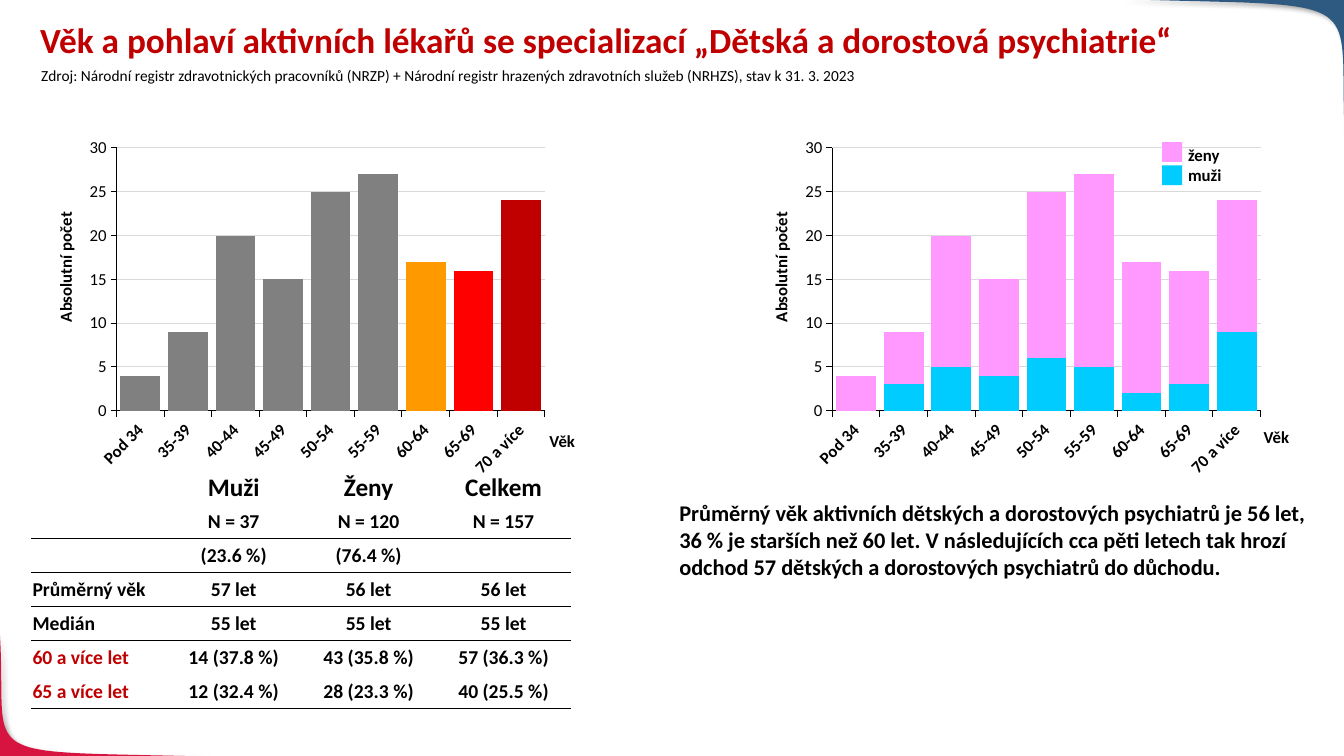
from dataclasses import dataclass

import lxml.etree
import pptx
import pptx.chart.data
import pptx.dml.color
import pptx.enum.chart
import pptx.enum.shapes
import pptx.enum.text
import pptx.oxml.ns
import pptx.util

Cm = pptx.util.Cm
Pt = pptx.util.Pt
qn = pptx.oxml.ns.qn
Align = pptx.enum.text.PP_ALIGN
Point = tuple[float, float]


@dataclass(frozen=True)
class Theme:
    font: str = "Calibri"
    ink: str = "000000"
    accent: str = "C00000"
    grid: str = "D9D9D9"
    women: str = "FF99FF"
    men: str = "00CCFF"
    total: str = "808080"
    sixty: str = "FF9900"
    sixty_five: str = "FF0000"
    corner_blue: str = "2E5980"
    corner_red: str = "D71440"
    title_size: float = 25.2
    heading_size: float = 18
    body_size: float = 16
    table_size: float = 14
    label_size: float = 12
    source_size: float = 11


@dataclass(frozen=True)
class Corner:
    color: str
    start: Point
    curve: tuple[Point, Point, Point]
    tip: Point


@dataclass(frozen=True)
class Series:
    name: str
    values: tuple[int, ...]
    color: str


@dataclass(frozen=True)
class AgeChart:
    left: float
    kind: pptx.enum.chart.XL_CHART_TYPE
    series: tuple[Series, ...]
    highlights: dict[int, str]
    age_label: tuple[float, float, float]
    count_label_left: float


THEME = Theme()
AGES = ("Pod 34", "35-39", "40-44", "45-49", "50-54", "55-59", "60-64", "65-69", "70 a více")
CORNERS = (
    Corner(THEME.corner_red, (5.41, 19.07), ((-0.86, 18.9), (0.2, 19.28), (0, 16)), (-0.02, 19.07)),
    Corner(THEME.corner_blue, (28.22, -0.02), ((34.8, 0.18), (33.68, -0.25), (33.9, 3.61)), (33.9, -0.02)),
)
CHARTS = (
    AgeChart(2.03, pptx.enum.chart.XL_CHART_TYPE.COLUMN_CLUSTERED,
             (Series("celkem", (4, 9, 20, 15, 25, 27, 17, 16, 24), THEME.total),),
             {6: THEME.sixty, 7: THEME.sixty_five, 8: THEME.accent}, (13.51, 10.74, 1.32), -0.02),
    AgeChart(20.07, pptx.enum.chart.XL_CHART_TYPE.COLUMN_STACKED,
             (Series("muži", (0, 3, 5, 4, 6, 5, 2, 3, 9), THEME.men),
              Series("ženy", (4, 6, 15, 11, 19, 22, 15, 13, 15), THEME.women)),
             {}, (31.34, 10.62, 1.65), 18.01),
)
SUMMARY = (
    ("", "Muži", "Ženy", "Celkem"),
    ("", "N = 37", "N = 120", "N = 157"),
    ("", "(23.6 %)", "(76.4 %)", ""),
    ("Průměrný věk", "57 let", "56 let", "56 let"),
    ("Medián", "55 let", "55 let", "55 let"),
    ("60 a více let", "14 (37.8 %)", "43 (35.8 %)", "57 (36.3 %)"),
    ("65 a více let", "12 (32.4 %)", "28 (23.3 %)", "40 (25.5 %)"),
)
RULED_ROWS = {1, 2, 3, 4, 6}
ACCENT_ROWS = {5, 6}


def rgb(color: str) -> pptx.dml.color.RGBColor:
    return pptx.dml.color.RGBColor.from_string(color)


def style_font(font, size: float, color: str = THEME.ink, bold: bool = False) -> None:
    font.name, font.size, font.bold = THEME.font, Pt(size), bold
    font.color.rgb = rgb(color)


def write(frame, text: str, *, size: float, color: str = THEME.ink, bold: bool = True,
          align=Align.LEFT, spacing: float | None = None) -> None:
    for index, line in enumerate(text.split("\n")):
        para = frame.add_paragraph() if index else frame.paragraphs[0]
        para.alignment, para.line_spacing = align, spacing
        span = para.add_run()
        span.text = line
        style_font(span.font, size, color, bold)


def add_text(page, left: float, top: float, width: float, height: float, text: str, *,
             wrap: bool = True, rotation: float = 0, **style) -> None:
    box = page.shapes.add_textbox(Cm(left), Cm(top), Cm(width), Cm(height))
    box.rotation = rotation
    box.text_frame.word_wrap = wrap
    write(box.text_frame, text, **style)


def fill_plain(shape, color: str) -> None:
    shape.shadow.inherit = False
    shape.fill.solid()
    shape.fill.fore_color.rgb = rgb(color)
    shape.line.fill.background()


def curve_points(start: Point, curve: tuple[Point, Point, Point], steps: int = 40) -> list[Point]:
    anchors = (start, *curve)
    points = []
    for step in range(1, steps + 1):
        t = step / steps
        weights = ((1 - t) ** 3, 3 * t * (1 - t) ** 2, 3 * t ** 2 * (1 - t), t ** 3)
        points.append(tuple(sum(w * a[axis] for w, a in zip(weights, anchors)) for axis in (0, 1)))
    return points


def add_corner(page, corner: Corner) -> None:
    outline = [*curve_points(corner.start, corner.curve), corner.tip]
    builder = page.shapes.build_freeform(Cm(corner.start[0]), Cm(corner.start[1]))
    builder.add_line_segments([(Cm(x), Cm(y)) for x, y in outline], close=True)
    shape = builder.convert_to_shape()
    fill_plain(shape, corner.color)
    effects = shape._element.spPr.find(qn("a:effectLst"))
    shadow = lxml.etree.SubElement(effects, qn("a:outerShdw"), blurRad=str(Pt(4)), dist=str(Pt(3)),
                                   dir="2700000", algn="tl", rotWithShape="0")
    tone = lxml.etree.SubElement(shadow, qn("a:srgbClr"), val=THEME.ink)
    lxml.etree.SubElement(tone, qn("a:alpha"), val="40000")


def set_plot_layout(chart) -> None:
    plot_area = chart._chartSpace.chart.plotArea
    for old in plot_area.findall(qn("c:layout")):
        plot_area.remove(old)
    layout = lxml.etree.Element(qn("c:layout"))
    manual = lxml.etree.SubElement(layout, qn("c:manualLayout"))
    settings = {"layoutTarget": "inner", "xMode": "edge", "yMode": "edge",
                "x": "0.076", "y": "0.048", "w": "0.904", "h": "0.741"}
    for name, value in settings.items():
        lxml.etree.SubElement(manual, qn(f"c:{name}"), val=value)
    plot_area.insert(0, layout)


def style_axis(axis, bold: bool) -> None:
    axis.major_tick_mark = pptx.enum.chart.XL_TICK_MARK.OUTSIDE
    axis.minor_tick_mark = pptx.enum.chart.XL_TICK_MARK.NONE
    axis.format.line.color.rgb = rgb(THEME.ink)
    axis.format.line.width = Pt(0.75)
    style_font(axis.tick_labels.font, THEME.label_size, bold=bold)


def add_age_chart(page, spec_chart: AgeChart) -> None:
    data = pptx.chart.data.CategoryChartData()
    data.categories = AGES
    for series in spec_chart.series:
        data.add_series(series.name, series.values)
    chart = page.shapes.add_chart(spec_chart.kind, Cm(spec_chart.left), Cm(3.3),
                                  Cm(11.94), Cm(8.94), data).chart
    chart.has_title = chart.has_legend = False
    style_font(chart.font, THEME.label_size)
    set_plot_layout(chart)
    plot = chart.plots[0]
    plot.gap_width, plot.vary_by_categories = 20, False
    plot.overlap = 100 if len(spec_chart.series) > 1 else 0
    for drawn, series in zip(plot.series, spec_chart.series):
        drawn.format.fill.solid()
        drawn.format.fill.fore_color.rgb = rgb(series.color)
        for index, color in spec_chart.highlights.items():
            fill = drawn.points[index].format.fill
            fill.solid()
            fill.fore_color.rgb = rgb(color)
    ages, counts = chart.category_axis, chart.value_axis
    style_axis(ages, True)
    style_axis(counts, False)
    ages._element.txPr.find(qn("a:bodyPr")).set("rot", "-2700000")
    counts.minimum_scale, counts.maximum_scale, counts.major_unit = 0, 30, 5
    counts.major_gridlines.format.line.color.rgb = rgb(THEME.grid)
    counts.major_gridlines.format.line.width = Pt(0.75)
    left, top, width = spec_chart.age_label
    add_text(page, left, top, width, 0.76, "Věk", size=THEME.label_size, align=Align.CENTER)
    add_text(page, spec_chart.count_label_left, 6.35, 3.33, 0.76, "Absolutní počet",
             size=THEME.label_size, align=Align.CENTER, wrap=False, rotation=270)


def set_borders(cell, top: bool, bottom: bool) -> None:
    sides = {"lnL": False, "lnR": False, "lnT": top, "lnB": bottom}
    for index, (side, ruled) in enumerate(sides.items()):
        line = lxml.etree.Element(qn(f"a:{side}"), w=str(Pt(1)))
        fill = lxml.etree.SubElement(line, qn("a:solidFill" if ruled else "a:noFill"))
        if ruled:
            lxml.etree.SubElement(fill, qn("a:srgbClr"), val=THEME.ink)
        cell._tc.get_or_add_tcPr().insert(index, line)


def add_summary(page) -> None:
    table = page.shapes.add_table(len(SUMMARY), len(SUMMARY[0]), Cm(0.79), Cm(11.86),
                                  Cm(13.6), Cm(5.99)).table
    table.first_row = table.horz_banding = False
    for row, texts in enumerate(SUMMARY):
        for column, text in enumerate(texts):
            cell = table.cell(row, column)
            cell.fill.background()
            cell.vertical_anchor = pptx.enum.text.MSO_ANCHOR.MIDDLE
            cell.margin_left = cell.margin_right = cell.margin_top = Cm(0.03)
            cell.margin_bottom = 0
            set_borders(cell, row - 1 in RULED_ROWS, row in RULED_ROWS)
            if text:
                write(cell.text_frame, text, size=THEME.table_size if row else THEME.heading_size,
                      color=THEME.accent if row in ACCENT_ROWS and not column else THEME.ink,
                      align=Align.CENTER if column else Align.LEFT)


def main() -> None:
    deck = pptx.Presentation()
    deck.slide_width, deck.slide_height = Cm(33.87), Cm(19.05)
    page = deck.slides.add_slide(deck.slide_layouts[6])
    for corner in CORNERS:
        add_corner(page, corner)
    add_text(page, 0.76, 0.46, 29.21, 1.5,
             "Věk a pohlaví aktivních lékařů se specializací „Dětská a dorostová psychiatrie“",
             size=THEME.title_size, color=THEME.accent, spacing=0.9)
    for age_chart in CHARTS:
        add_age_chart(page, age_chart)
    add_text(page, 29.69, 3.51, 1.65, 1.27, "ženy\nmuži", size=THEME.label_size)
    for index, color in enumerate((THEME.women, THEME.men)):
        swatch = page.shapes.add_shape(pptx.enum.shapes.MSO_SHAPE.RECTANGLE, Cm(29.29),
                                       Cm(3.58 + 0.59 * index), Cm(0.5), Cm(0.5))
        fill_plain(swatch, color)
    add_text(page, 0.79, 1.55, 28.47, 0.74,
             "Zdroj: Národní registr zdravotnických pracovníků (NRZP) + Národní registr hrazených "
             "zdravotních služeb (NRHZS), stav k 31. 3. 2023", size=THEME.source_size, bold=False)
    add_summary(page)
    add_text(page, 16.87, 12.45, 16.38, 2.31,
             "Průměrný věk aktivních dětských a dorostových psychiatrů je 56 let, 36 % je starších "
             "než 60 let. V následujících cca pěti letech tak hrozí odchod 57 dětských a dorostových "
             "psychiatrů do důchodu.", size=THEME.body_size)
    deck.save("out.pptx")


if __name__ == "__main__":
    main()
